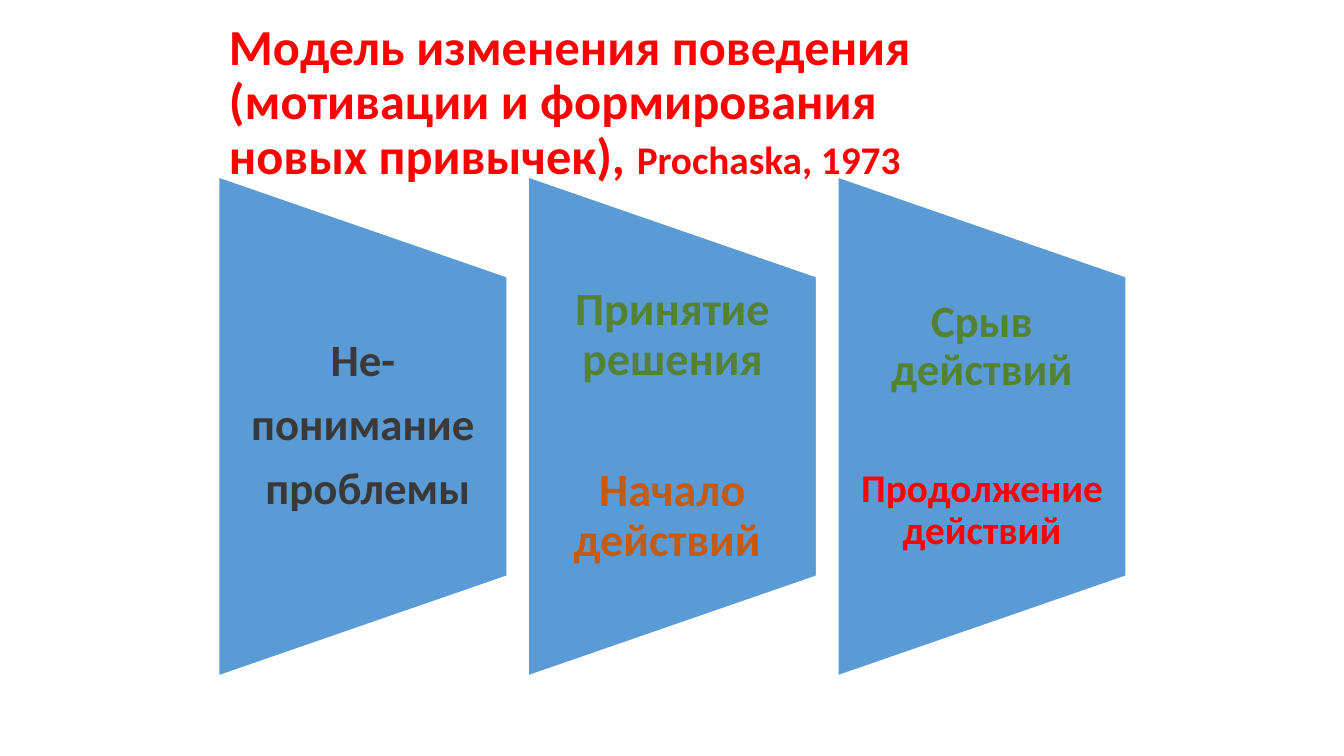
from dataclasses import dataclass

from pptx import Presentation
from pptx.dml.color import RGBColor as Rgb
from pptx.enum.shapes import MSO_SHAPE as Shape
from pptx.enum.text import MSO_ANCHOR as Anchor, MSO_AUTO_SIZE as Fit, PP_ALIGN as Align
from pptx.util import Inches, Pt


@dataclass(frozen=True)
class Theme:
    """Colours, font and type sizes of the slide."""
    font: str = "Calibri"
    blue: str = "5B9BD5"
    white: str = "FFFFFF"
    red: str = "FF0000"
    dark: str = "3B3838"
    green: str = "548235"
    orange: str = "C55A11"
    head: int = 36
    large: int = 33
    body: int = 32
    small: int = 28


T = Theme()
STAGES = [
    [("Не-", T.body, T.dark, 0), ("понимание", T.body, T.dark, 11),
     (" проблемы", T.body, T.dark, 11)],
    [("Принятие решения", T.large, T.green, 0),
     ("Начало действий ", T.large, T.orange, 58)],
    [("Срыв действий", T.body, T.green, 0),
     ("Продолжение действий", T.small, T.red, 52)],
]


def assign(item, values):
    """Set each named attribute of an item."""
    for name, value in values.items():
        setattr(item, name, value)


def add_run(para, text, size, color):
    """Add a bold run of text."""
    run = para.add_run()
    run.text = text
    assign(run.font, {"name": T.font, "size": Pt(size), "bold": True})
    run.font.color.rgb = Rgb.from_string(color)


def set_frame(frame, inset):
    """Wrap and centre a text frame vertically with given side insets."""
    assign(frame, {"word_wrap": True, "auto_size": Fit.NONE,
                   "vertical_anchor": Anchor.MIDDLE,
                   "margin_left": Inches(inset), "margin_right": Inches(inset)})


def put_title(slide):
    """Place and fill the title."""
    title = slide.shapes.title
    assign(title, {"left": Inches(2.17), "top": Inches(0.35),
                   "width": Inches(7.92), "height": Inches(1.35)})
    set_frame(title.text_frame, 0.1)
    para = title.text_frame.paragraphs[0]
    assign(para, {"alignment": Align.LEFT, "line_spacing": 0.9})
    add_run(para, "Модель изменения поведения ", T.head, T.red)
    para.add_line_break()
    add_run(para, "(мотивации и формирования новых привычек), ", T.head, T.red)
    add_run(para, "Prochaska, 1973", T.small, T.red)


def add_panel(slide, left):
    """Add a trapezoid turned to narrow towards the right."""
    long, short = 4.95, 2.86
    panel = slide.shapes.add_shape(
        Shape.FLOWCHART_MANUAL_OPERATION, Inches(left - (long - short) / 2),
        Inches(2.8), Inches(long), Inches(short))
    panel.rotation = 270
    panel.shadow.inherit = False
    panel.fill.solid()
    panel.fill.fore_color.rgb = Rgb.from_string(T.blue)
    panel.line.color.rgb = Rgb.from_string(T.white)
    panel.line.width = Pt(1)


def add_label(slide, left, lines):
    """Add the upright text of a stage."""
    box = slide.shapes.add_textbox(Inches(left), Inches(2.74), Inches(2.86), Inches(2.97))
    frame = box.text_frame
    set_frame(frame, 0.22)
    assign(frame, {"margin_top": 0, "margin_bottom": 0})
    for i, (text, size, color, gap) in enumerate(lines):
        para = frame.add_paragraph() if i else frame.paragraphs[0]
        assign(para, {"alignment": Align.CENTER, "line_spacing": 0.9,
                      "space_before": Pt(gap)})
        add_run(para, text, size, color)


def main():
    """Build and save the slide."""
    deck = Presentation()
    assign(deck, {"slide_width": Inches(13.33), "slide_height": Inches(7.5)})
    slide = deck.slides.add_slide(deck.slide_layouts.get_by_name("Title Only"))
    put_title(slide)
    for i, lines in enumerate(STAGES):
        left = 2.17 + 3.07 * i
        add_panel(slide, left)
        add_label(slide, left, lines)
    deck.save("out.pptx")


if __name__ == "__main__":
    main()
